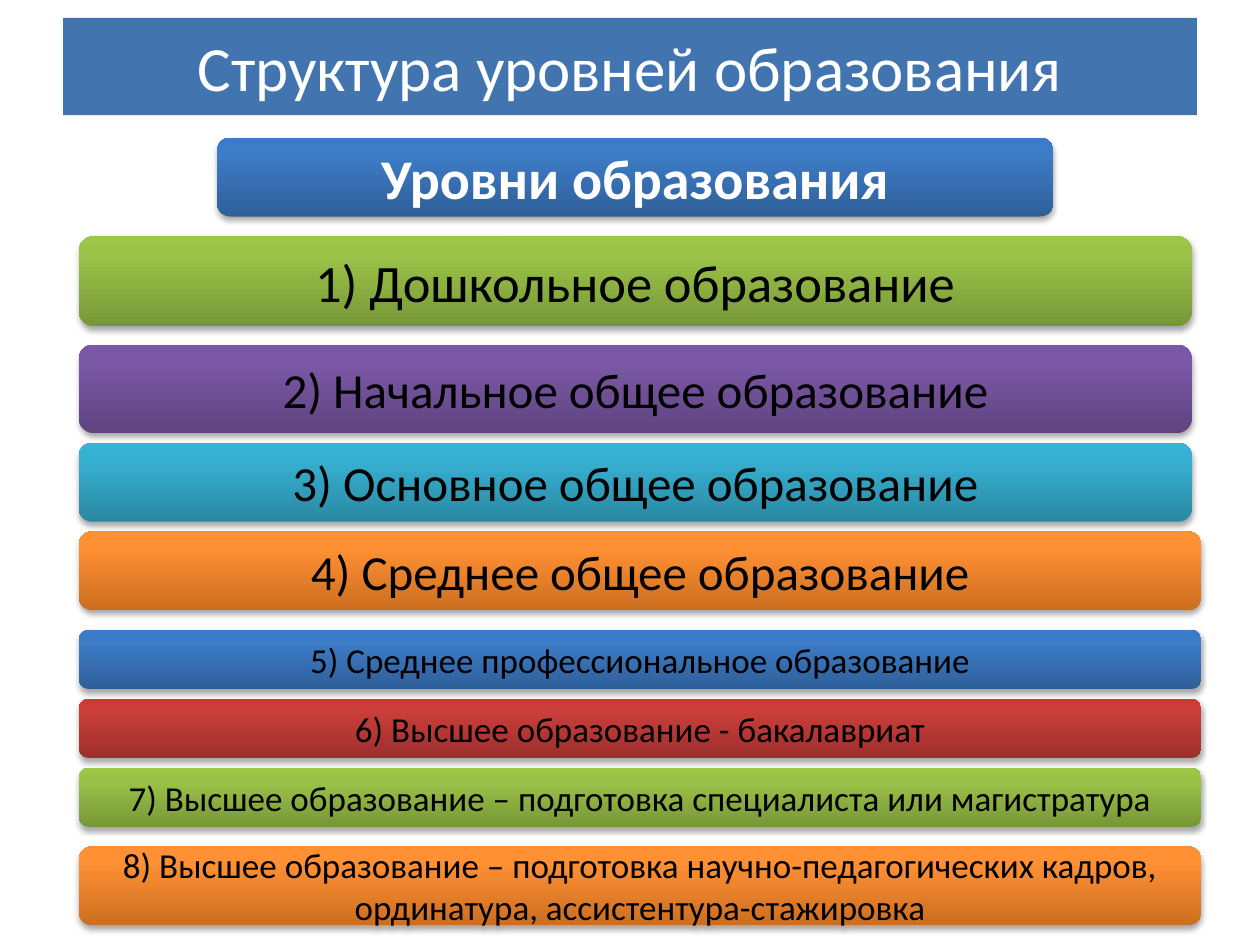
from copy import deepcopy
from dataclasses import dataclass

from lxml import etree
from pptx import Presentation
from pptx.dml.color import RGBColor
from pptx.enum.shapes import MSO_SHAPE
from pptx.enum.text import MSO_ANCHOR, PP_ALIGN
from pptx.oxml.ns import qn
from pptx.util import Pt

ROUNDED = MSO_SHAPE.ROUNDED_RECTANGLE
CENTER = PP_ALIGN.CENTER
MIDDLE = MSO_ANCHOR.MIDDLE

FONT = "Calibri"
WHITE = RGBColor(0xFF, 0xFF, 0xFF)
BLACK = RGBColor(0x00, 0x00, 0x00)
TITLE_BLUE = RGBColor(0x42, 0x74, 0xB0)

BLUE = (RGBColor(0x2F, 0x5F, 0x99), RGBColor(0x3D, 0x7C, 0xC7), RGBColor(0x3A, 0x7C, 0xCB))
GREEN = (RGBColor(0x77, 0x97, 0x37), RGBColor(0x9B, 0xC3, 0x48), RGBColor(0x9D, 0xC7, 0x46))
PURPLE = (RGBColor(0x5F, 0x44, 0x80), RGBColor(0x7B, 0x58, 0xA6), RGBColor(0x7C, 0x57, 0xA8))
TEAL = (RGBColor(0x2A, 0x88, 0xA2), RGBColor(0x37, 0xB1, 0xD2), RGBColor(0x34, 0xB4, 0xD6))
ORANGE = (RGBColor(0xCC, 0x6E, 0x20), RGBColor(0xFF, 0x90, 0x34), RGBColor(0xFF, 0x91, 0x36))
RED = (RGBColor(0x9C, 0x2F, 0x2D), RGBColor(0xCB, 0x3E, 0x3A), RGBColor(0xCE, 0x3B, 0x37))
STOPS = (0, 0.8, 1)

LEVEL_LEFT = 45
SCHOOL_WIDTH = 636
WIDE_WIDTH = 641.5


@dataclass(frozen=True)
class Bar:
    text: str
    top: float
    height: float
    width: float
    colors: tuple
    size: float
    left: float = LEVEL_LEFT
    color: RGBColor = BLACK
    bold: bool = False


BARS = (
    Bar("Уровни образования", 78.75, 45, 478, BLUE, 32, left=124, color=WHITE, bold=True),
    Bar("1) Дошкольное образование", 135, 51.5, SCHOOL_WIDTH, GREEN, 30),
    Bar("2) Начальное общее образование", 196.9, 50.6, SCHOOL_WIDTH, PURPLE, 28),
    Bar("3) Основное общее образование", 253.1, 45, SCHOOL_WIDTH, TEAL, 28),
    Bar("4) Среднее общее образование", 303.75, 45, WIDE_WIDTH, ORANGE, 28),
    Bar("5) Среднее профессиональное образование", 360, 33.75, WIDE_WIDTH, BLUE, 20),
    Bar("6) Высшее образование - бакалавриат", 399.4, 33.75, WIDE_WIDTH, RED, 20),
    Bar("7) Высшее образование – подготовка специалиста или магистратура",
        438.75, 33.75, WIDE_WIDTH, GREEN, 20),
    Bar("8) Высшее образование – подготовка научно-педагогических кадров, "
        "ординатура, ассистентура-стажировка", 483.75, 45, WIDE_WIDTH, ORANGE, 20),
)


def write_text(shape, text: str, *, size: float, color: RGBColor, bold: bool = False) -> None:
    frame = shape.text_frame
    frame.word_wrap = True
    frame.vertical_anchor = MIDDLE
    paragraph = frame.paragraphs[0]
    paragraph.alignment = CENTER
    run = paragraph.add_run()
    run.text = text
    run.font.name = FONT
    run.font.size = Pt(size)
    run.font.bold = bold
    run.font.color.rgb = color


def fill_gradient(shape, colors: tuple) -> None:
    shape.fill.gradient()
    shape.fill.gradient_angle = 90
    stop_list = next(shape.element.spPr.iter(qn("a:gsLst")))
    stop_list.append(deepcopy(stop_list[-1]))
    for stop, position, color in zip(shape.fill.gradient_stops, STOPS, colors):
        stop.position = position
        stop.color.rgb = color


def add_soft_shadow(shape) -> None:
    shape.shadow.inherit = False
    effects = shape.element.spPr.find(qn("a:effectLst"))
    shadow = etree.SubElement(
        effects, qn("a:outerShdw"), blurRad=str(Pt(3.15)), dist=str(Pt(1.8)),
        dir="5400000", rotWithShape="0")
    tint = etree.SubElement(shadow, qn("a:srgbClr"), val=str(BLACK))
    etree.SubElement(tint, qn("a:alpha"), val="35000")


def add_bar(slide, bar: Bar) -> None:
    shape = slide.shapes.add_shape(
        ROUNDED, Pt(bar.left), Pt(bar.top), Pt(bar.width), Pt(bar.height))
    fill_gradient(shape, bar.colors)
    shape.line.fill.background()
    add_soft_shadow(shape)
    write_text(shape, bar.text, size=bar.size, color=bar.color, bold=bar.bold)


def add_title(slide, text: str) -> None:
    title = slide.shapes.title
    title.left, title.top, title.width, title.height = Pt(36), Pt(10.25), Pt(648), Pt(55.5)
    title.fill.solid()
    title.fill.fore_color.rgb = TITLE_BLUE
    write_text(title, text, size=36, color=WHITE)


def main() -> None:
    deck = Presentation()
    deck.slide_width, deck.slide_height = Pt(720), Pt(540)
    slide = deck.slides.add_slide(deck.slide_layouts[5])
    add_title(slide, "Структура уровней образования")
    for bar in BARS:
        add_bar(slide, bar)
    deck.save("out.pptx")


if __name__ == "__main__":
    main()
